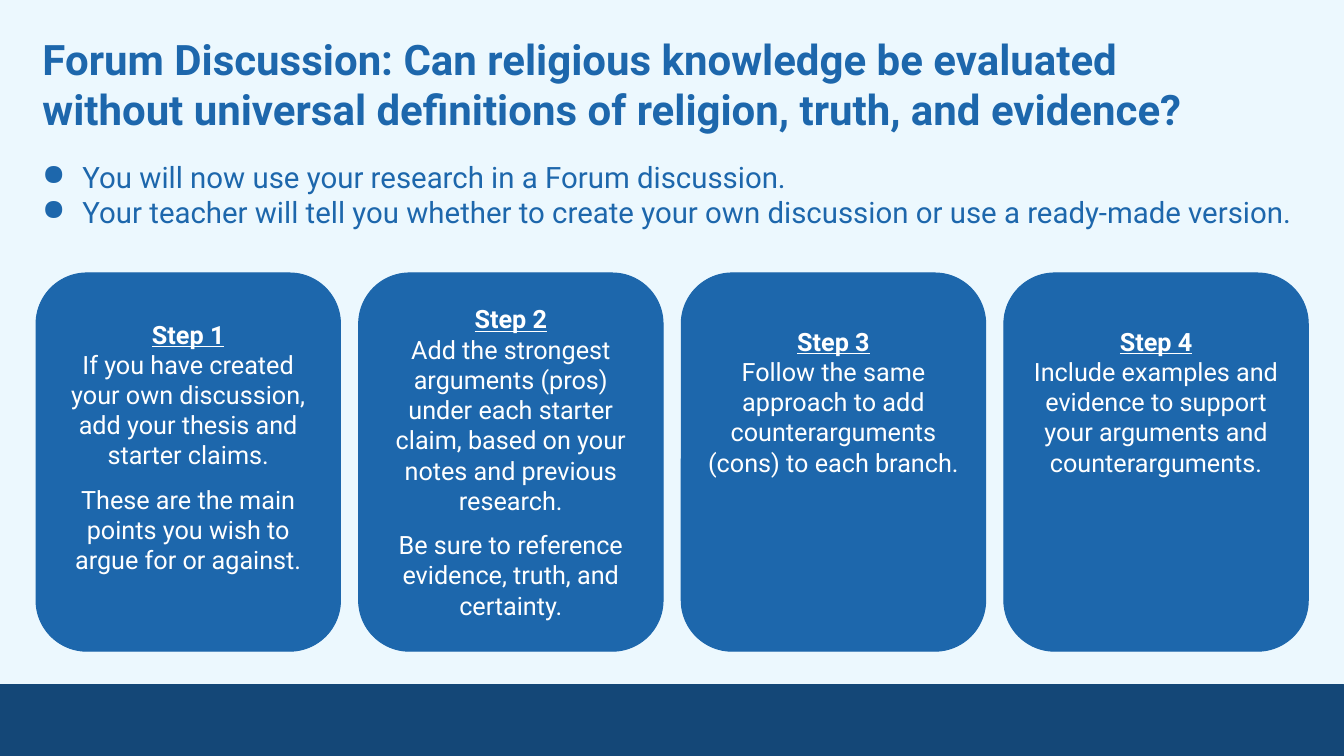
from dataclasses import dataclass

from lxml import etree
from pptx import Presentation
from pptx.dml.color import RGBColor
from pptx.enum import shapes, text
from pptx.oxml.ns import qn
from pptx.util import Cm, Pt


@dataclass(frozen=True)
class Theme:
    font: str = "Roboto"
    background: str = "ECF8FE"
    blue: str = "1D67AC"
    navy: str = "144777"
    white: str = "FFFFFF"
    title: int = 30
    bullet: int = 21
    card: int = 18


THEME = Theme()
WIDTH, HEIGHT = 33.87, 19.05
FOOTER_HEIGHT = 1.8

TITLE = ("Forum Discussion: Can religious knowledge be evaluated without "
         "universal definitions of religion, truth, and evidence?")
BULLETS = [
    "You will now use your research in a Forum discussion.",
    "Your teacher will tell you whether to create your own discussion "
    "or use a ready-made version.",
]
# Space above the heading in cm, then the paragraphs of each step
STEPS = [
    (0.78, ["If you have created your own discussion, add your thesis and "
            "starter claims.",
            "These are the main points you wish to argue for or against."]),
    (0.4, ["Add the strongest arguments (pros) under each starter claim, "
           "based on your notes and previous research.",
           "Be sure to reference evidence, truth, and certainty."]),
    (0.96, ["Follow the same approach to add counterarguments (cons) to "
            "each branch."]),
    (0.96, ["Include examples and evidence to support your arguments and "
            "counterarguments."]),
]


def set_frame(tf, inset, top=None):
    """Wrap text from the top, with equal insets unless top is given."""
    tf.word_wrap = True
    tf.auto_size = text.MSO_AUTO_SIZE.NONE
    tf.vertical_anchor = text.MSO_ANCHOR.TOP
    tf.margin_left = tf.margin_right = tf.margin_bottom = Cm(inset)
    tf.margin_top = Cm(inset if top is None else top)


def add_bullet(p, color):
    pPr = p._p.get_or_add_pPr()
    pPr.set("marL", str(Cm(1.27)))
    pPr.set("indent", str(Cm(-1.02)))
    clr = etree.SubElement(pPr, qn("a:buClr"))
    etree.SubElement(clr, qn("a:srgbClr")).set("val", color)
    etree.SubElement(pPr, qn("a:buChar")).set("char", "●")


def add_text(tf, words, *, size, color, bold=False, underline=False,
             align=text.PP_ALIGN.LEFT, before=0, bullet=False):
    """Write one paragraph, filling the first one while it is empty."""
    p = tf.paragraphs[0] if not tf.text else tf.add_paragraph()
    if bullet:
        add_bullet(p, color)
    p.alignment = align
    p.line_spacing = 1.0
    p.space_before = Pt(before)
    r = p.add_run()
    r.text = words
    r.font.name = THEME.font
    r.font.size = Pt(size)
    r.font.bold = bold
    r.font.underline = underline
    r.font.color.rgb = RGBColor.from_string(color)


def add_block(s, kind, box, color):
    sp = s.shapes.add_shape(kind, *map(Cm, box))
    sp.shadow.inherit = False
    sp.fill.solid()
    sp.fill.fore_color.rgb = RGBColor.from_string(color)
    sp.line.color.rgb = RGBColor.from_string(color)
    sp.line.width = Pt(0.75)
    return sp


def fill_title(s, box):
    sp = s.shapes.title
    sp.left, sp.top, sp.width, sp.height = map(Cm, box)
    set_frame(sp.text_frame, 0.33)
    add_text(sp.text_frame, TITLE, size=THEME.title, color=THEME.blue,
             bold=True)


def add_intro(s, box):
    tf = s.shapes.add_textbox(*map(Cm, box)).text_frame
    set_frame(tf, 0.25)
    for words in BULLETS:
        add_text(tf, words, size=THEME.bullet, color=THEME.blue, bullet=True)


def add_card(s, box, heading, top, paragraphs):
    sp = add_block(s, shapes.MSO_SHAPE.ROUNDED_RECTANGLE, box, THEME.blue)
    sp.adjustments[0] = 0.167
    tf = sp.text_frame
    set_frame(tf, 0.25, top)
    style = dict(size=THEME.card, color=THEME.white,
                 align=text.PP_ALIGN.CENTER)
    add_text(tf, heading, bold=True, underline=True, **style)
    for i, words in enumerate(paragraphs):
        add_text(tf, words, before=10 if i else 0, **style)


def add_steps(s, box, gap=0.46):
    """Share the box equally among the step cards."""
    left, top, width, height = box
    card = (width - gap * (len(STEPS) - 1)) / len(STEPS)
    for i, (inset, paragraphs) in enumerate(STEPS):
        add_card(s, (left + i * (card + gap), top, card, height),
                 f"Step {i + 1}", inset, paragraphs)


def main():
    prs = Presentation()
    prs.slide_width, prs.slide_height = Cm(WIDTH), Cm(HEIGHT)
    s = prs.slides.add_slide(prs.slide_layouts[5])
    s.background.fill.solid()
    s.background.fill.fore_color.rgb = RGBColor.from_string(THEME.background)
    add_block(s, shapes.MSO_SHAPE.RECTANGLE,
              (0, HEIGHT - FOOTER_HEIGHT, WIDTH, FOOTER_HEIGHT), THEME.navy)
    fill_title(s, (0.74, 0.51, 30.96, 3.25))
    add_intro(s, (0.56, 3.76, 32.77, 2.31))
    add_steps(s, (0.91, 6.88, 32.06, 9.53))
    prs.save("out.pptx")


if __name__ == "__main__":
    main()
